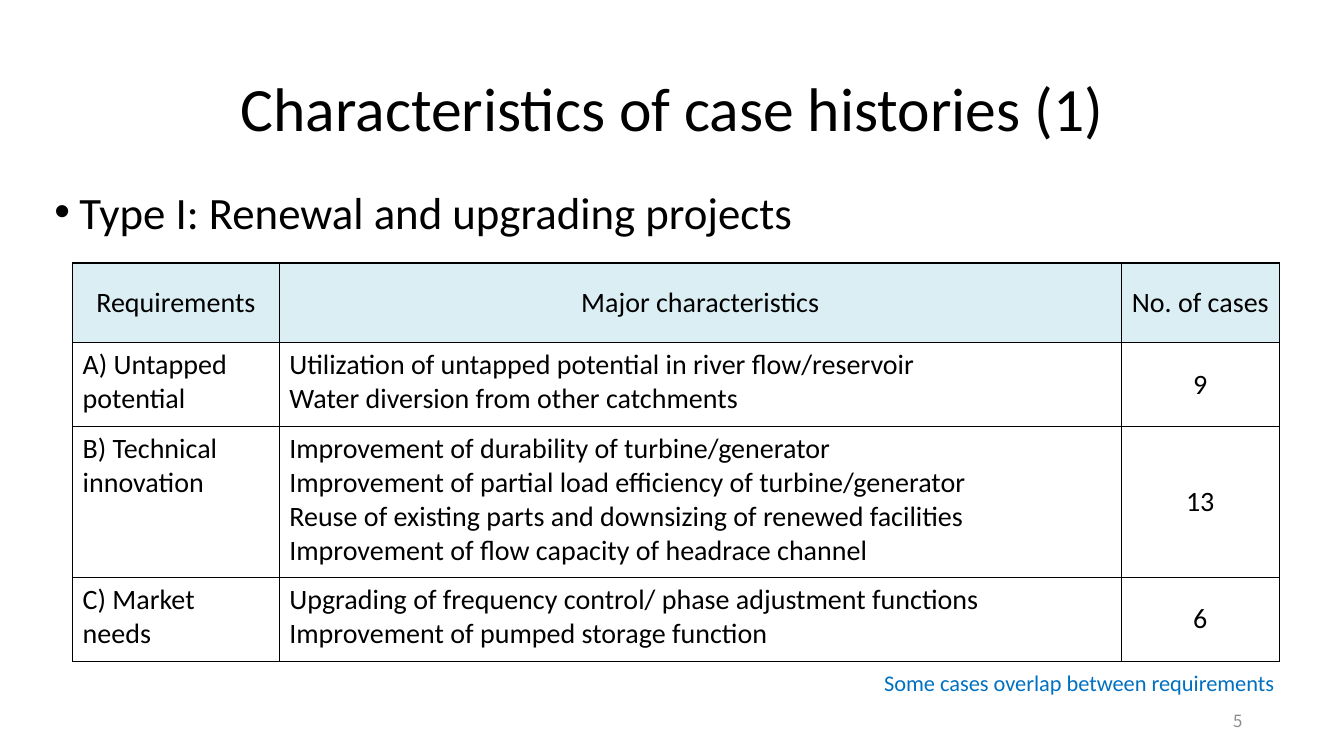
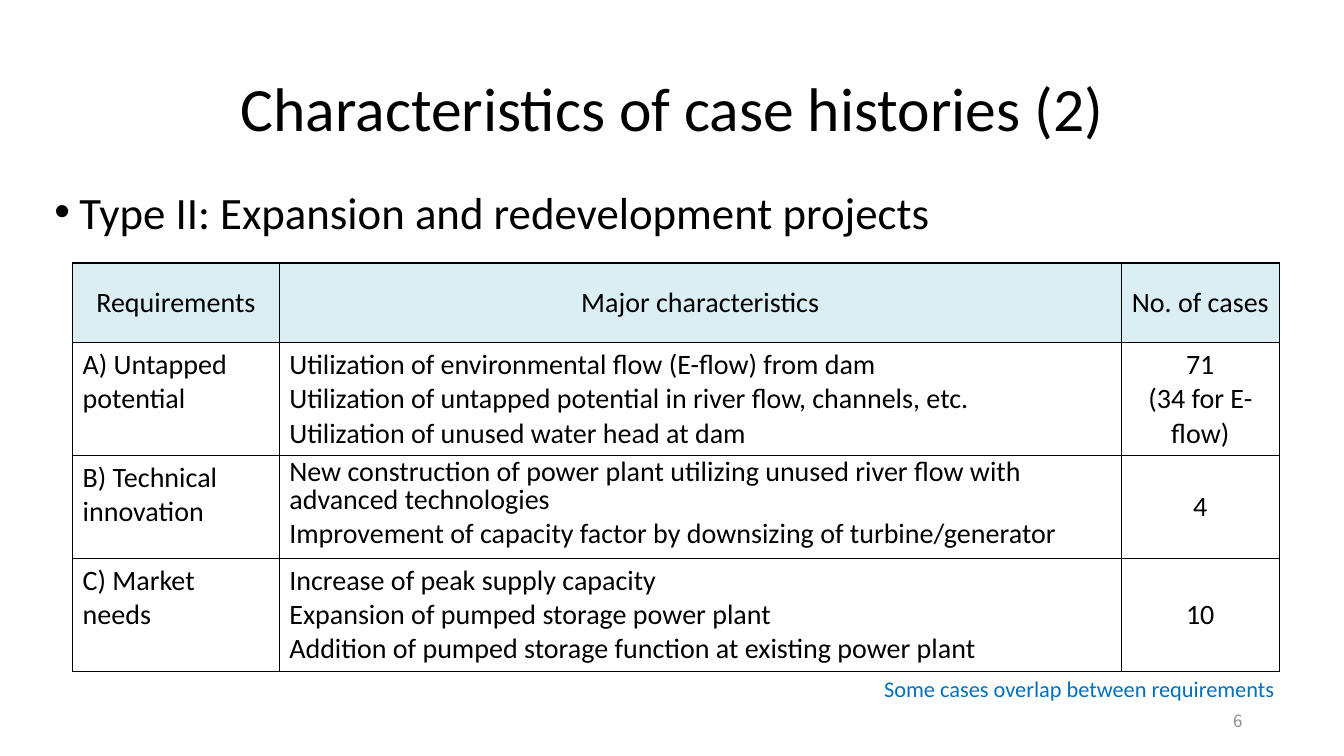
from dataclasses import dataclass

import lxml.etree
import pptx
import pptx.dml.color
import pptx.enum.text
import pptx.oxml
import pptx.oxml.ns
import pptx.util

Inches = pptx.util.Inches
Pt = pptx.util.Pt
Align = pptx.enum.text.PP_ALIGN
Anchor = pptx.enum.text.MSO_ANCHOR

BODY_FONT = "Calibri"
NUMBER_FONT = "Noto Sans CJK JP"
BLACK = "000000"
GREY = "8C8C8C"
BLUE = "0070C0"
HEADER_FILL = "DBEEF4"

COLUMN_WIDTHS = (2.05, 8.35, 1.57)
HEADER_HEIGHT = 0.79
HEADERS = ("Requirements", "Major characteristics", "No. of cases")
TABLE_LEFT, TABLE_TOP = 0.72, 2.61
NOTE = "Some cases overlap between requirements"


@dataclass(frozen=True)
class TextStyle:
    size: float
    color: str = BLACK
    font: str = BODY_FONT
    align: Align = Align.LEFT
    anchor: Anchor = Anchor.TOP


@dataclass(frozen=True)
class Requirement:
    name: str
    characteristics: str
    cases: str
    height: float
    tight_first_line: bool = False


@dataclass(frozen=True)
class CasePage:
    title: str
    subject: str
    requirements: tuple[Requirement, ...]
    note_top: float
    number: int


TITLE = TextStyle(44, align=Align.CENTER, anchor=Anchor.MIDDLE)
SUBJECT = TextStyle(32)
CELL = TextStyle(20)
CENTERED_CELL = TextStyle(20, align=Align.CENTER, anchor=Anchor.MIDDLE)
NOTE_STYLE = TextStyle(16, BLUE)
NUMBER = TextStyle(12, GREY, NUMBER_FONT, Align.RIGHT, Anchor.MIDDLE)

CASE_PAGES = (
    CasePage(
        "Characteristics of case histories (1)",
        "Type I: Renewal and upgrading projects",
        (
            Requirement(
                "A) Untapped potential",
                "Utilization of untapped potential in river flow/reservoir\n"
                "Water diversion from other catchments",
                "9", 0.83,
            ),
            Requirement(
                "B) Technical innovation",
                "Improvement of durability of turbine/generator\n"
                "Improvement of partial load efficiency of turbine/generator\n"
                "Reuse of existing parts and downsizing of renewed facilities\n"
                "Improvement of flow capacity of headrace channel",
                "13", 1.5,
            ),
            Requirement(
                "C) Market needs",
                "Upgrading of frequency control/ phase adjustment functions\n"
                "Improvement of pumped storage function",
                "6", 0.83,
            ),
        ),
        6.59, 5,
    ),
    CasePage(
        "Characteristics of case histories (2)",
        "Type II: Expansion and redevelopment projects",
        (
            Requirement(
                "A) Untapped potential",
                "Utilization of environmental flow (E-flow) from dam\n"
                "Utilization of untapped potential in river flow, channels, etc.\n"
                "Utilization of unused water head at dam",
                "71\n(34 for E-flow)", 1.12,
            ),
            Requirement(
                "B) Technical innovation",
                "New construction of power plant utilizing unused river flow with "
                "advanced technologies\n"
                "Improvement of capacity factor by downsizing of turbine/generator",
                "4", 1.02, tight_first_line=True,
            ),
            Requirement(
                "C) Market needs",
                "Increase of peak supply capacity\n"
                "Expansion of pumped storage power plant\n"
                "Addition of pumped storage function at existing power plant",
                "10", 1.12,
            ),
        ),
        6.65, 6,
    ),
)


def rgb(color: str) -> pptx.dml.color.RGBColor:
    return pptx.dml.color.RGBColor.from_string(color)


def write(frame: pptx.text.text.TextFrame, text: str, style: TextStyle) -> None:
    frame.text = text
    for para in frame.paragraphs:
        para.alignment = style.align
        for span in para.runs:
            span.font.size = Pt(style.size)
            span.font.name = style.font
            span.font.color.rgb = rgb(style.color)


def add_text(
    page: pptx.slide.Slide, left: float, top: float, width: float, height: float,
    text: str, style: TextStyle,
) -> pptx.text.text._Paragraph:
    box = page.shapes.add_textbox(Inches(left), Inches(top), Inches(width), Inches(height))
    frame = box.text_frame
    frame.word_wrap = True
    frame.vertical_anchor = style.anchor
    write(frame, text, style)
    return frame.paragraphs[0]


def add_bullet(para: pptx.text.text._Paragraph) -> None:
    para.space_before = Pt(6)
    properties = para._p.get_or_add_pPr()
    properties.set("marL", str(Inches(0.25)))
    properties.set("indent", str(Inches(-0.25)))
    for tag, name, value in (("a:buFont", "typeface", "Arial"), ("a:buChar", "char", "•")):
        lxml.etree.SubElement(properties, pptx.oxml.ns.qn(tag)).set(name, value)


def add_borders(cell: pptx.table._Cell) -> None:
    properties = cell._tc.get_or_add_tcPr()
    for side in ("lnL", "lnR", "lnT", "lnB"):
        properties.append(pptx.oxml.parse_xml(
            f'<a:{side} {pptx.oxml.ns.nsdecls("a")} w="{Pt(1)}">'
            f'<a:solidFill><a:srgbClr val="{BLACK}"/></a:solidFill></a:{side}>'
        ))


def fill_cell(cell: pptx.table._Cell, text: str, style: TextStyle, fill: str = "") -> None:
    write(cell.text_frame, text, style)
    cell.vertical_anchor = style.anchor
    add_borders(cell)
    if fill:
        cell.fill.solid()
        cell.fill.fore_color.rgb = rgb(fill)
    else:
        cell.fill.background()


def add_case_table(page: pptx.slide.Slide, requirements: tuple[Requirement, ...]) -> None:
    heights = (HEADER_HEIGHT, *(requirement.height for requirement in requirements))
    table = page.shapes.add_table(
        len(heights), len(COLUMN_WIDTHS), Inches(TABLE_LEFT), Inches(TABLE_TOP),
        Inches(sum(COLUMN_WIDTHS)), Inches(sum(heights)),
    ).table
    table.first_row = False
    table.horz_banding = False
    for column, width in zip(table.columns, COLUMN_WIDTHS):
        column.width = Inches(width)
    for row, height in zip(table.rows, heights):
        row.height = Inches(height)
    for index, header in enumerate(HEADERS):
        fill_cell(table.cell(0, index), header, CENTERED_CELL, HEADER_FILL)
    for index, requirement in enumerate(requirements, 1):
        fill_cell(table.cell(index, 0), requirement.name, CELL)
        fill_cell(table.cell(index, 1), requirement.characteristics, CELL)
        fill_cell(table.cell(index, 2), requirement.cases, CENTERED_CELL)
        if requirement.tight_first_line:
            table.cell(index, 1).text_frame.paragraphs[0].line_spacing = Pt(20)


def add_case_page(deck: pptx.presentation.Presentation, content: CasePage) -> None:
    page = deck.slides.add_slide(deck.slide_layouts[6])
    title = add_text(page, 0.92, 0.4, 11.5, 1.42, content.title, TITLE)
    title.line_spacing = 0.9
    add_case_table(page, content.requirements)
    add_text(page, 9.42, 6.95, 3, 0.4, str(content.number), NUMBER)
    add_bullet(add_text(page, 0.44, 1.78, 12.46, 0.72, content.subject, SUBJECT))
    add_text(page, 8.67, content.note_top, 4.17, 0.39, NOTE, NOTE_STYLE)


def main() -> None:
    deck = pptx.Presentation()
    deck.slide_width = Inches(13.33)
    deck.slide_height = Inches(7.5)
    for content in CASE_PAGES:
        add_case_page(deck, content)
    deck.save("out.pptx")


if __name__ == "__main__":
    main()
